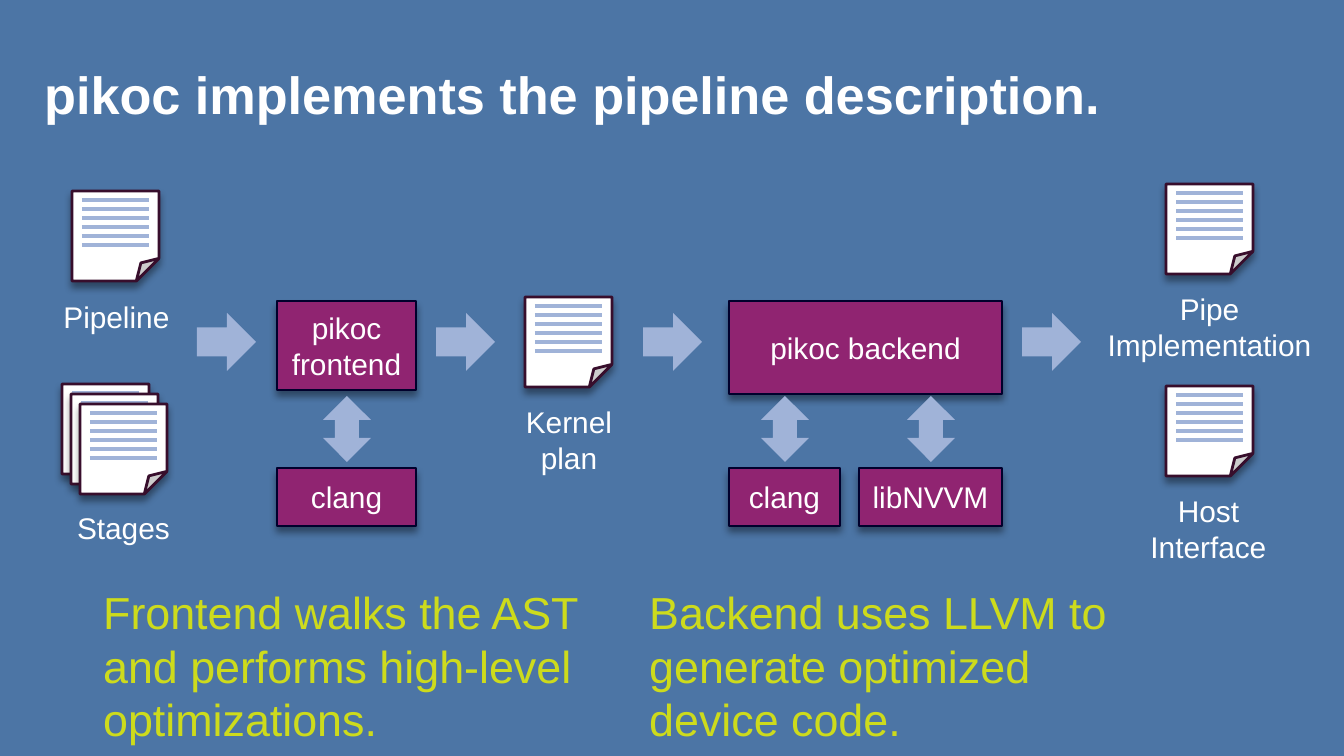
"""Builds the slide on how pikoc implements the pipeline description."""
import lxml.etree
import pptx
import pptx.util
import pptx.dml.color
import pptx.enum.shapes
import pptx.enum.text
import pptx.oxml.ns

SHAPE = pptx.enum.shapes.MSO_SHAPE
ANCHOR = pptx.enum.text.MSO_ANCHOR
ALIGN = pptx.enum.text.PP_ALIGN

COLORS = {"back": "4C75A5", "white": "FFFFFF", "pale": "A0B3D8", "box": "902471",
          "box_edge": "00002C", "page_edge": "380E2C", "note": "CDDB1C"}
FORMATS = {
    "title": {"size": 28, "bold": True, "color": "white", "align": ALIGN.LEFT, "anchor": ANCHOR.MIDDLE},
    "label": {"size": 16, "bold": False, "color": "white", "align": ALIGN.CENTER, "anchor": ANCHOR.TOP},
    "box": {"size": 16, "bold": False, "color": "white", "align": ALIGN.CENTER, "anchor": ANCHOR.MIDDLE},
    "note": {"size": 24, "bold": False, "color": "note", "align": ALIGN.LEFT, "anchor": ANCHOR.TOP},
}
TEXTS = [
    ("title", "pikoc implements the pipeline description.", (31, 31, 1286, 126)),
    ("label", "Pipeline", (15, 292, 203, 50)),
    ("label", "Stages", (22, 503, 203, 50)),
    ("label", "Kernel\nplan", (508, 397, 122, 86)),
    ("label", "Pipe Implementation", (1091, 284, 237, 86)),
    ("label", "Host Interface", (1107, 486, 203, 86)),
    ("note", "Frontend walks the AST and performs high-level optimizations.", (90, 578, 554, 176)),
    ("note", "Backend uses LLVM to generate optimized device code.", (636, 578, 493, 176)),
]
BOXES = [
    ("pikoc\nfrontend", (277, 301, 139, 89)),
    ("clang", (277, 468, 139, 58)),
    ("pikoc backend", (729, 301, 273, 93)),
    ("clang", (729, 468, 111, 58)),
    ("libNVVM", (859, 468, 143, 58)),
]
PAGES = [(72, 191), (62, 384), (71, 394), (80, 404), (525, 297), (1166, 184), (1166, 386)]
PAGE_W, PAGE_H = 87, 90
RULES, RULE_GAP, RULE_INSET = 6, 9, 10
FLOW_XS, FLOW_Y, FLOW_SIZE = [197, 436, 643, 1022], 313, (59, 58)
LINK_XS, LINK_Y, LINK_SIZE = [323, 761, 907], 396, (48, 66)


def px(n):
    return pptx.util.Emu(round(n * 9144000 / 1344))


def rgb(name):
    return pptx.dml.color.RGBColor.from_string(COLORS[name])


def add_xml(parent, tag, **attributes):
    return lxml.etree.SubElement(parent, pptx.oxml.ns.qn(tag), **attributes)


def write(sp, text, kind):
    fmt = FORMATS[kind]
    tf = sp.text_frame
    tf.word_wrap = True
    tf.vertical_anchor = fmt["anchor"]
    tf.text = text
    for p in tf.paragraphs:
        p.alignment = fmt["align"]
        font = p.runs[0].font
        values = {"name": "Arial", "size": pptx.util.Pt(fmt["size"]), "bold": fmt["bold"]}
        for key, value in values.items():
            setattr(font, key, value)
        font.color.rgb = rgb(fmt["color"])


def add_shape(s, kind, area, fill, edge=None, width=1):
    sp = s.shapes.add_shape(kind, *map(px, area))
    sp.shadow.inherit = False
    sp.fill.solid()
    sp.fill.fore_color.rgb = rgb(fill)
    if edge:
        sp.line.color.rgb = rgb(edge)
        sp.line.width = pptx.util.Pt(width)
        cast_shadow(sp)
    else:
        sp.line.fill.background()
    return sp


def cast_shadow(sp):
    effects = sp._element.spPr.find(pptx.oxml.ns.qn("a:effectLst"))
    shadow = add_xml(effects, "a:outerShdw", blurRad="50800", dist="38100",
                     dir="5400000", rotWithShape="0")
    color = add_xml(shadow, "a:srgbClr", val="000000")
    add_xml(color, "a:alpha", val="40000")


def add_page(s, x, y):
    sp = add_shape(s, SHAPE.FOLDED_CORNER, (x, y, PAGE_W, PAGE_H), "white", "page_edge", 1.5)
    guides = next(sp._element.spPr.iter(pptx.oxml.ns.qn("a:avLst")))
    add_xml(guides, "a:gd", name="adj", fmla="val 26000")
    for i in range(1, RULES + 1):
        rule_y = y + i * RULE_GAP
        ends = (x + RULE_INSET, rule_y, x + PAGE_W - RULE_INSET, rule_y)
        rule = s.shapes.add_connector(pptx.enum.shapes.MSO_CONNECTOR.STRAIGHT, *map(px, ends))
        rule.line.color.rgb = rgb("pale")
        rule.line.width = pptx.util.Pt(2)
        add_xml(rule._element.spPr, "a:effectLst")


def main():
    prs = pptx.Presentation()
    prs.slide_width, prs.slide_height = px(1344), px(756)
    s = prs.slides.add_slide(prs.slide_layouts[6])
    s.background.fill.solid()
    s.background.fill.fore_color.rgb = rgb("back")
    for x, y in PAGES:
        add_page(s, x, y)
    for text, area in BOXES:
        sp = add_shape(s, SHAPE.RECTANGLE, area, "box", "box_edge")
        sp.text_frame.margin_left = sp.text_frame.margin_right = 0
        write(sp, text, "box")
    for x in FLOW_XS:
        add_shape(s, SHAPE.RIGHT_ARROW, (x, FLOW_Y, *FLOW_SIZE), "pale")
    for x in LINK_XS:
        add_shape(s, SHAPE.UP_DOWN_ARROW, (x, LINK_Y, *LINK_SIZE), "pale")
    for kind, text, area in TEXTS:
        write(s.shapes.add_textbox(*map(px, area)), text, kind)
    prs.save("out.pptx")


if __name__ == "__main__":
    main()
